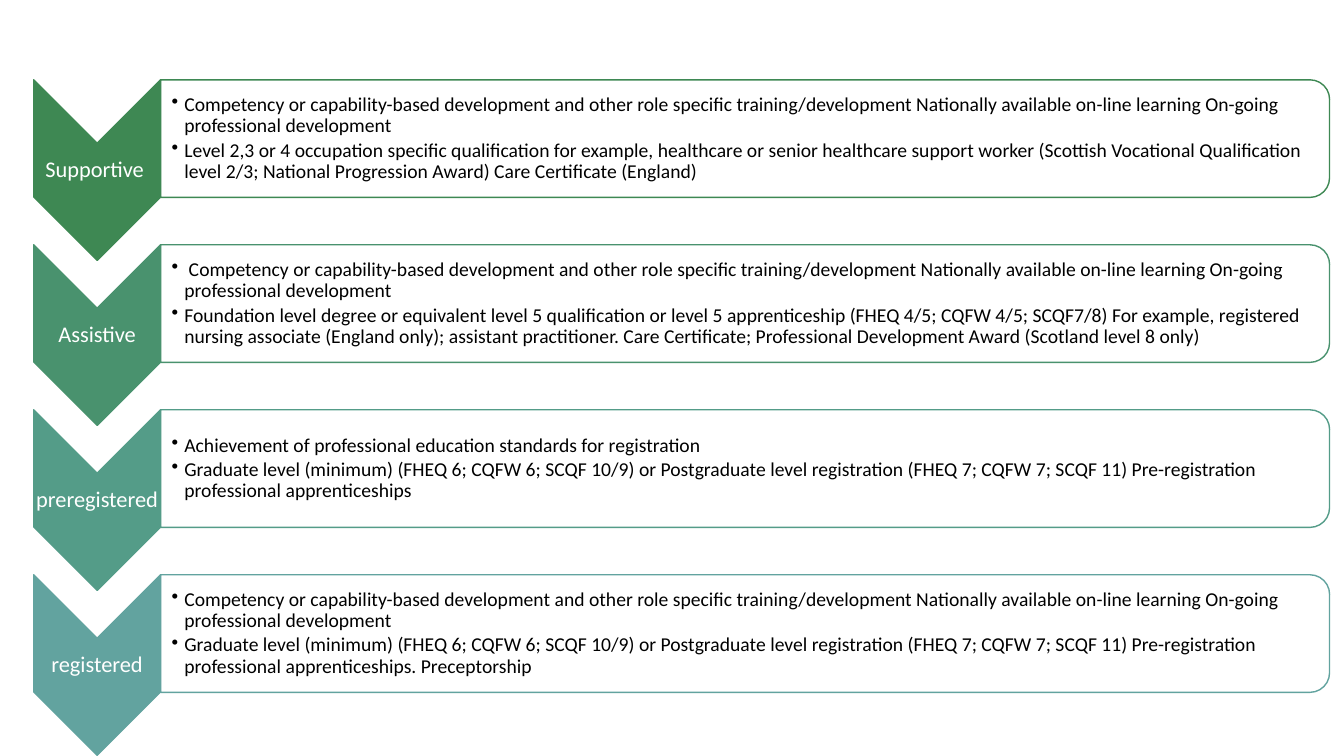
from pptx import Presentation
from pptx.dml.color import RGBColor
from pptx.enum.shapes import MSO_SHAPE as SHAPE
from pptx.enum.text import MSO_ANCHOR as ANCHOR, PP_ALIGN as ALIGN
from pptx.oxml.ns import qn
from pptx.util import Pt
from lxml.etree import SubElement

COMPETENCY = ("Competency or capability-based development and other role specific "
              "training/development Nationally available on-line learning "
              "On-going professional development")
GRADUATE = ("Graduate level (minimum) (FHEQ 6; CQFW 6; SCQF 10/9) or Postgraduate level "
            "registration (FHEQ 7; CQFW 7; SCQF 11) Pre-registration professional apprenticeships")
LEVELS = [
    ("Supportive ", [
        COMPETENCY,
        "Level 2,3 or 4 occupation specific qualification for example, healthcare or senior "
        "healthcare support worker (Scottish Vocational Qualification level 2/3; National "
        "Progression Award) Care Certificate (England)"]),
    (" Assistive ", [
        " " + COMPETENCY,
        "Foundation level degree or equivalent level 5 qualification or level 5 apprenticeship "
        "(FHEQ 4/5; CQFW 4/5; SCQF7/8) For example, registered nursing associate (England only); "
        "assistant practitioner. Care Certificate; Professional Development Award "
        "(Scotland level 8 only)"]),
    ("preregistered", [
        "Achievement of professional education standards for registration",
        GRADUATE]),
    ("registered", [COMPETENCY, GRADUATE + ". Preceptorship"]),
]
COLORS = {"Supportive": "3E8853", "Assistive": "49926E", "preregistered": "549C88",
          "registered": "62A39F", "white": "FFFFFF", "black": "000000"}

FONT = "Calibri"
LEFT, TOP, PITCH = 24.1, 57, 117.85
CHEVRON_W, CHEVRON_H = 90.6, 129
PANEL_LEFT, PANEL_W, PANEL_H = LEFT + CHEVRON_W, 835, 84
LABEL_TOP, LABEL_H = 45, 39
LIST_W, LIST_H = 831, 75.6
BULLET_INDENT = 9


def rgb(name):
    return RGBColor.from_string(COLORS[name])


def add_turned(kind, x, y, w, h, fill, line):
    """Add a shape turned by 90 degrees that covers the box x, y, w, h."""
    s = slide.shapes.add_shape(kind, Pt(x + (w - h) / 2), Pt(y + (h - w) / 2), Pt(h), Pt(w))
    s.rotation = 90
    s.shadow.inherit = False
    s.fill.solid()
    s.fill.fore_color.rgb = rgb(fill)
    s.line.color.rgb = rgb(line)
    s.line.width = Pt(1)
    return s


def add_text(x, y, w, h, lines, size, color, after, inset=1, bullets=False):
    tf = slide.shapes.add_textbox(Pt(x), Pt(y), Pt(w), Pt(h)).text_frame
    tf.word_wrap = True
    tf.vertical_anchor = ANCHOR.MIDDLE
    tf.margin_left = Pt(inset)
    tf.margin_top = tf.margin_right = tf.margin_bottom = Pt(1)
    for i, line in enumerate(lines):
        p = tf.paragraphs[0] if i == 0 else tf.add_paragraph()
        p.line_spacing = 0.9
        p.space_after = Pt(after)
        if bullets:
            pPr = p._p.get_or_add_pPr()
            pPr.set("marL", str(Pt(BULLET_INDENT)))
            pPr.set("indent", str(-Pt(BULLET_INDENT)))
            SubElement(pPr, qn("a:buChar")).set("char", "•")
        else:
            p.alignment = ALIGN.CENTER
        r = p.add_run()
        r.text = line
        r.font.name = FONT
        r.font.size = Pt(size)
        r.font.color.rgb = rgb(color)


prs = Presentation()
prs.slide_width, prs.slide_height = Pt(960), Pt(540)
slide = prs.slides.add_slide(prs.slide_layouts[6])

for i, (label, points) in enumerate(LEVELS):
    y = TOP + i * PITCH
    color = label.strip()
    add_turned(SHAPE.CHEVRON, LEFT, y, CHEVRON_W, CHEVRON_H, color, color)
    add_text(LEFT, y + LABEL_TOP, CHEVRON_W, LABEL_H, [label], 16, "white", after=5.6)
    panel = add_turned(SHAPE.ROUND_2_SAME_RECTANGLE, PANEL_LEFT, y, PANEL_W, PANEL_H,
                       "white", color)
    tint = panel._element.spPr.find(qn("a:solidFill"))[0]
    SubElement(tint, qn("a:alpha")).set("val", "90000")
    add_text(PANEL_LEFT, y + (PANEL_H - LIST_H) / 2, LIST_W, LIST_H, points, 14, "black",
             after=2.1, inset=8, bullets=True)

prs.save("out.pptx")
